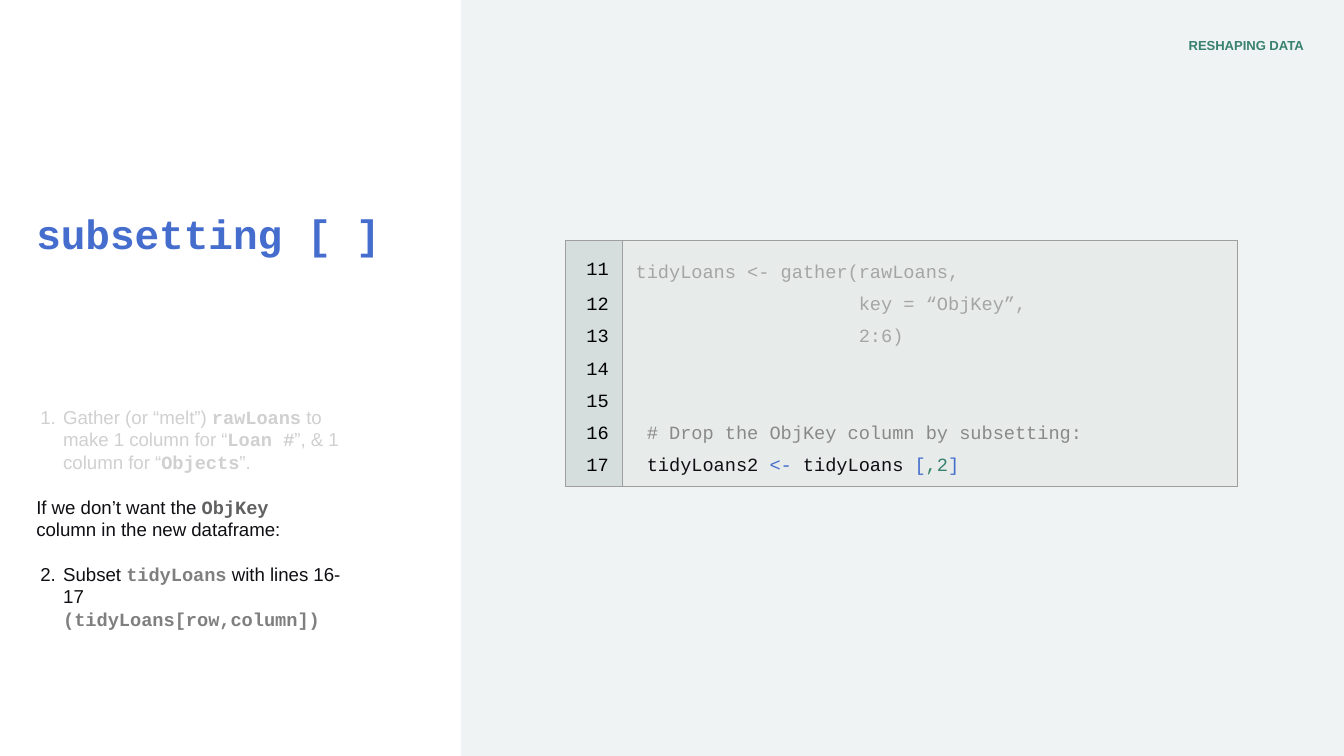
from typing import NamedTuple, Optional

from lxml.etree import SubElement
from pptx import Presentation
from pptx.dml.color import RGBColor
from pptx.enum.shapes import MSO_SHAPE
from pptx.enum.text import MSO_ANCHOR as Anchor, MSO_AUTO_SIZE as AutoSize, PP_ALIGN as Align
from pptx.oxml.ns import qn
from pptx.util import Inches, Pt

SANS, MONO = "Arial", "Courier New"
INK, BLUE, GREEN, FADED = "0F0F14", "446DCD", "37816E", "D0D0D0"
CODE_FADED, COMMENT, NAME, BORDER = "A5A5A5", "898989", "7F7F7F", "9E9E9E"
NO_TABLE_STYLE = "{2D5ABB26-0587-4C30-8999-92F81FD0307C}"


class Piece(NamedTuple):
    text: str
    color: str = INK
    font: str = SANS
    bold: bool = False
    size: float = 10


class BodyLine(NamedTuple):
    pieces: list[Piece]
    number: Optional[int] = None
    space_before: float = 0


class CodeLine(NamedTuple):
    number: int
    height: float
    pieces: list[Piece]


def rgb(value: str) -> RGBColor:
    return RGBColor.from_string(value)


def code(text: str, color: str = INK, bold: bool = False) -> Piece:
    return Piece(text, color, MONO, bold)


def write(paragraph, pieces: list[Piece]) -> None:
    for piece in pieces:
        run = paragraph.add_run()
        run.text = piece.text
        run.font.name, run.font.size = piece.font, Pt(piece.size)
        run.font.bold = piece.bold
        run.font.color.rgb = rgb(piece.color)


def set_up_frame(shape, margins: tuple, anchor):
    frame = shape.text_frame
    frame.word_wrap = True
    frame.auto_size = AutoSize.NONE
    frame.vertical_anchor = anchor
    (frame.margin_left, frame.margin_top,
     frame.margin_right, frame.margin_bottom) = map(Inches, margins)
    return frame


def number_paragraph(paragraph, number: int, color: str) -> None:
    properties = paragraph._p.get_or_add_pPr()
    properties.set("marL", str(Inches(0.2)))
    properties.set("indent", str(Inches(-0.17)))
    bullet_color = SubElement(properties, qn("a:buClr"))
    SubElement(bullet_color, qn("a:srgbClr"), val=color)
    SubElement(properties, qn("a:buFont"), typeface=SANS)
    SubElement(properties, qn("a:buAutoNum"), type="arabicPeriod", startAt=str(number))


def border_cell(cell, sides: str) -> None:
    properties = cell._tc.get_or_add_tcPr()
    for index, side in enumerate(sides):
        line = SubElement(properties, qn(f"a:ln{side}"), w=str(Pt(0.75)))
        fill = SubElement(line, qn("a:solidFill"))
        SubElement(fill, qn("a:srgbClr"), val=BORDER)
        properties.insert(index, line)


def fill_cell(cell, pieces: list[Piece], fill: str, align, top: float, sides: str) -> None:
    cell.fill.solid()
    cell.fill.fore_color.rgb = rgb(fill)
    cell.vertical_anchor = Anchor.MIDDLE
    cell.margin_left = cell.margin_right = Inches(0.1)
    cell.margin_top = Inches(top if pieces else 0)
    cell.margin_bottom = Inches(0.1 if pieces else 0)
    paragraph = cell.text_frame.paragraphs[0]
    paragraph.alignment = align
    paragraph.line_spacing = 0.25
    write(paragraph, pieces)
    if not pieces:  # keeps an empty row as low as the others
        SubElement(paragraph._p, qn("a:endParaRPr"), sz="1000")
    border_cell(cell, sides)


def add_code_table(slide, lines: list[CodeLine]) -> None:
    height = sum(line.height for line in lines)
    frame = slide.shapes.add_table(len(lines), 2, Inches(4.21), Inches(1.79),
                                   Inches(5), Inches(height))
    table = frame.table
    table.first_row = table.horz_banding = False
    table._tbl.tblPr.find(qn("a:tableStyleId")).text = NO_TABLE_STYLE
    table.columns[0].width, table.columns[1].width = Inches(0.42), Inches(4.58)
    for index, line in enumerate(lines):
        table.rows[index].height = Inches(line.height)
        first, last = index == 0, index == len(lines) - 1
        sides = "LR" + "T" * first + "B" * last
        fill_cell(table.cell(index, 0), [code(str(line.number), "000000")],
                  "D5DDDD", Align.RIGHT, 0.2 if first else 0.1, sides)
        fill_cell(table.cell(index, 1), line.pieces,
                  "E7ECEA", Align.LEFT, 0.25 if first else 0.1, sides)


def add_body(slide, lines: list[BodyLine]) -> None:
    box = slide.shapes.add_textbox(Inches(0.27), Inches(2.92), Inches(2.38), Inches(2.25))
    frame = set_up_frame(box, (0, 0.1, 0.1, 0.1), Anchor.TOP)
    for index, line in enumerate(lines):
        paragraph = frame.add_paragraph() if index else frame.paragraphs[0]
        if line.space_before:
            paragraph.space_before = Pt(line.space_before)
        if line.number:
            number_paragraph(paragraph, line.number, line.pieces[0].color)
        write(paragraph, line.pieces)


CODE_LINES = [
    CodeLine(11, 0.16, [code("tidyLoans <- gather(rawLoans,", CODE_FADED)]),
    CodeLine(12, 0.11, [code("                    key = “ObjKey”,", CODE_FADED)]),
    CodeLine(13, 0.11, [code("                    2:6)", CODE_FADED)]),
    CodeLine(14, 0.11, []),
    CodeLine(15, 0.17, []),
    CodeLine(16, 0.11, [code(" # Drop the ObjKey column by subsetting:", COMMENT)]),
    CodeLine(17, 0.17, [code(" tidyLoans2 "), code("<-", BLUE), code(" tidyLoans "),
                        code("[", BLUE), code(",2", GREEN), code("]", BLUE)]),
]

BODY_LINES = [
    BodyLine([Piece("Gather (or “melt”) ", FADED), code("rawLoans", FADED, True),
              Piece(" to make 1 column for “", FADED), code("Loan #", FADED, True),
              Piece("”, & 1 column for “", FADED), code("Objects", FADED, True),
              Piece("”.", FADED)], number=1),
    BodyLine([Piece("If we don’t want the "), code("ObjKey", "616161", True)], space_before=12),
    BodyLine([Piece("column in the new dataframe:")]),
    BodyLine([Piece("Subset "), code("tidyLoans", NAME, True), Piece(" with lines 16-17 "),
              code("(tidyLoans[row,column])", NAME, True)], number=2, space_before=12),
]


def main() -> None:
    presentation = Presentation()
    presentation.slide_width = Inches(10)
    presentation.slide_height = Inches(10) * 9 // 16
    slide = presentation.slides.add_slide(presentation.slide_layouts[5])

    # Right-hand panel
    panel_left = Inches(3.43)
    panel = slide.shapes.add_shape(MSO_SHAPE.RECTANGLE, panel_left, 0,
                                   presentation.slide_width - panel_left,
                                   presentation.slide_height)
    panel.shadow.inherit = False
    panel.fill.solid()
    panel.fill.fore_color.rgb = rgb("F0F3F3")
    panel.line.fill.background()

    # Title
    title = slide.shapes.title
    title.left, title.top = Inches(0.27), Inches(0.88)
    title.width, title.height = Inches(2.71), Inches(1.14)
    heading = set_up_frame(title, (0, 0.1, 0.1, 0.1), Anchor.BOTTOM).paragraphs[0]
    heading.alignment, heading.line_spacing = Align.LEFT, 0.9
    write(heading, [Piece("subsetting [ ]", BLUE, MONO, True, 22)])

    # Section label
    label = slide.shapes.add_textbox(Inches(7.57), Inches(0.29), Inches(2.13), Inches(0.16))
    section = set_up_frame(label, (0, 0, 0, 0.1), Anchor.TOP).paragraphs[0]
    section.alignment, section.line_spacing = Align.RIGHT, 0.9
    write(section, [Piece("RESHAPING DATA", GREEN, SANS, True, 7)])

    # Steps and code
    add_body(slide, BODY_LINES)
    add_code_table(slide, CODE_LINES)

    presentation.save("out.pptx")


if __name__ == "__main__":
    main()
